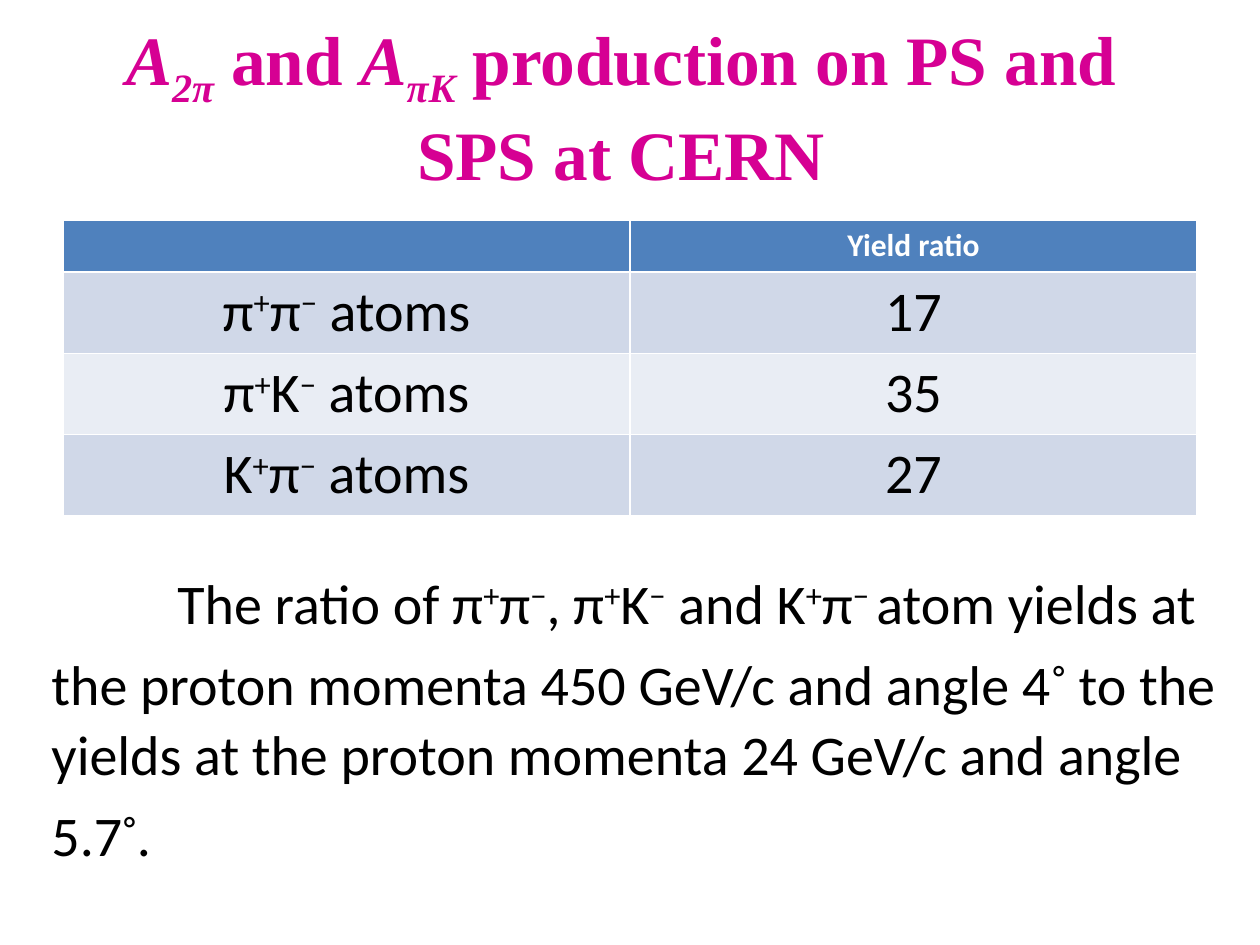
from pptx import Presentation
from pptx.dml.color import RGBColor
from pptx.enum.text import MSO_ANCHOR, MSO_AUTO_SIZE, PP_ALIGN
from pptx.util import Inches, Pt

LEFT, CENTER = PP_ALIGN.LEFT, PP_ALIGN.CENTER
TOP, MIDDLE = MSO_ANCHOR.TOP, MSO_ANCHOR.MIDDLE
GROW, FIXED = MSO_AUTO_SIZE.SHAPE_TO_FIT_TEXT, MSO_AUTO_SIZE.NONE
SHIFT = {"^": 30000, "_": -25000}
RING = "◦"


def color(code):
    return RGBColor.from_string(code)


def split(text):
    """Yield (piece, shift, italic); ^, _ and * switch super, sub and italic."""
    piece, shift, italic = "", 0, False
    for char in text:
        if char not in "^_*":
            piece += char
            continue
        if piece:
            yield piece, shift, italic
        piece = ""
        if char == "*":
            italic = not italic
        else:
            shift = 0 if shift else SHIFT[char]
    if piece:
        yield piece, shift, italic


def write(frame, text, size=32, font="Calibri", ink="000000", bold=False,
          align=CENTER, indent=0):
    para = frame.paragraphs[0]
    para.alignment = align
    if indent:
        props = para._p.get_or_add_pPr()
        props.set("marL", "0")
        props.set("indent", str(Inches(indent)))
    for piece, shift, italic in split(text):
        run = para.add_run()
        run.text = piece
        style = run.font
        style.size = Pt(40 if piece == RING else size)
        style.name = font
        style.bold = bold
        style.italic = italic
        style.color.rgb = color(ink)
        if shift:
            style._element.set("baseline", str(shift))


class Page:
    head = "4F81BD"
    bands = ("D0D8E8", "E9EDF4")

    def __init__(self, deck):
        self.slide = deck.slides.add_slide(deck.slide_layouts[6])

    def text(self, area, words, anchor=TOP, fit=FIXED, **form):
        box = self.slide.shapes.add_textbox(*map(Inches, area))
        frame = box.text_frame
        frame.word_wrap = True
        frame.auto_size = fit
        frame.vertical_anchor = anchor
        write(frame, words, **form)

    def table(self, area, rows):
        """Rows grow from their least height to fit the text."""
        shape = self.slide.shapes.add_table(
            len(rows), len(rows[0]), *map(Inches, area))
        grid = shape.table
        for i, row in enumerate(rows):
            grid.rows[i].height = Inches(0.41)
            for j, words in enumerate(row):
                cell = grid.cell(i, j)
                cell.fill.solid()
                fill = self.bands[(i - 1) % 2] if i else self.head
                cell.fill.fore_color.rgb = color(fill)
                form = {} if i else {"size": 18, "ink": "FFFFFF", "bold": True}
                write(cell.text_frame, words, **form)
        shape.height = Inches(area[3])


def main():
    deck = Presentation()
    deck.slide_width, deck.slide_height = Inches(10), Inches(7.5)
    page = Page(deck)
    page.table((0.5, 1.75, 9, 2.31), [
        ("", "Yield ratio"),
        ("π^+^π^−^ atoms", "17"),
        ("π^+^K^−^ atoms", "35"),
        ("K^+^π^−^ atoms", "27"),
    ])
    page.text((0.31, 4.46, 9.68, 2.26),
              "The ratio of π^+^π^−^, π^+^K^−^ and K^+^π^− ^atom yields at the "
              "proton momenta 450 GeV/c and angle 4^◦^ to the yields at the "
              "proton momenta 24 GeV/c and angle 5.7^◦^.",
              fit=GROW, align=LEFT, indent=1)
    page.text((0.43, 0.21, 9, 1.25),
              "*A_2π_* and *A_πK_* production on PS and SPS at CERN",
              anchor=MIDDLE, size=39.6, font="Times New Roman",
              ink="D60093", bold=True)
    deck.save("out.pptx")


if __name__ == "__main__":
    main()
